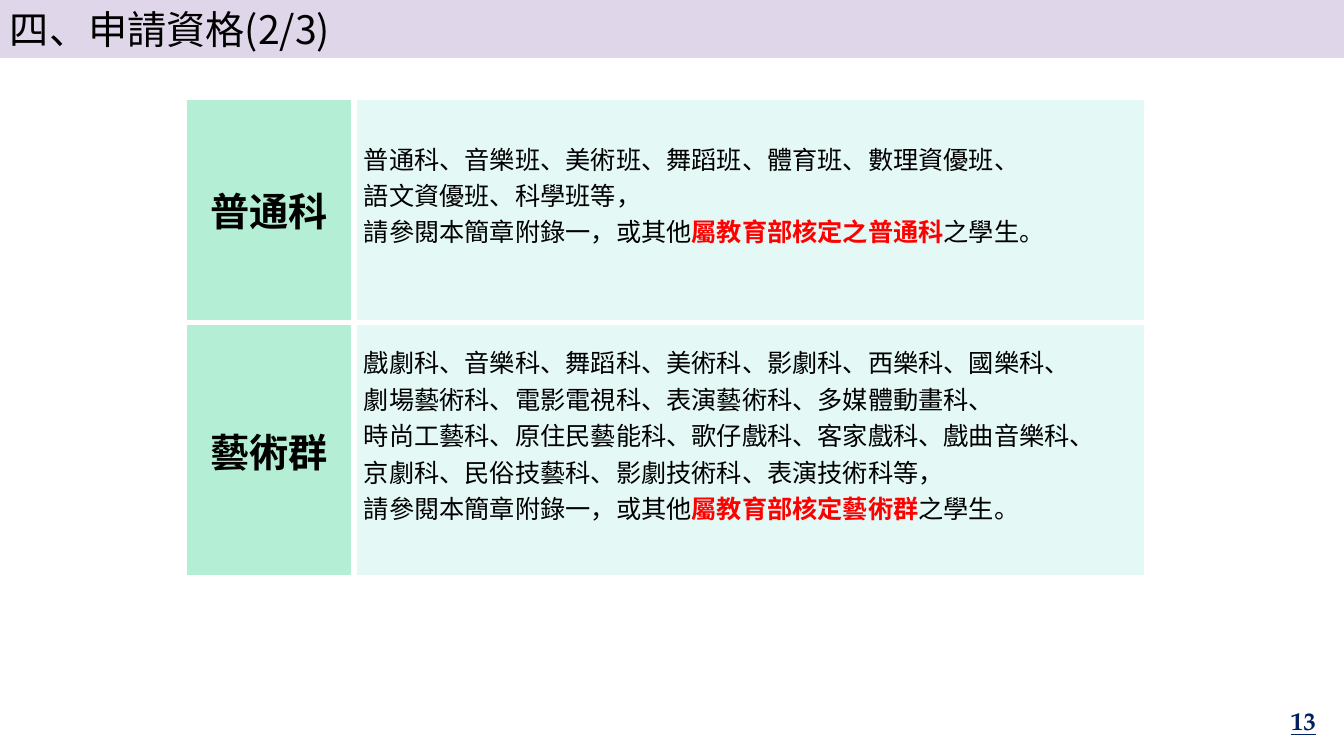
from dataclasses import dataclass

from lxml import etree
from pptx import Presentation
from pptx.dml.color import RGBColor
from pptx.enum import shapes, text
from pptx.oxml import ns
from pptx.util import Inches, Pt


@dataclass(frozen=True)
class Theme:
    sans: str = "Noto Sans CJK JP"
    serif: str = "TeX Gyre Pagella"
    ink: str = "000000"
    accent: str = "FF0000"
    navy: str = "002060"
    band: str = "DFD7E9"
    label_fill: str = "B4EED4"
    detail_fill: str = "E4F8F6"
    border: str = "FFFFFF"
    border_width: float = 4.5
    heading: int = 28
    body: int = 18


THEME = Theme()

GROUPS = [
    ("普通科", 2.24, [
        ["普通科、音樂班、美術班、舞蹈班、體育班、數理資優班、"],
        ["語文資優班、科學班等，"],
        ["請參閱本簡章附錄一，或其他", "屬教育部核定之普通科", "之學生。"],
    ]),
    ("藝術群", 2.53, [
        ["戲劇科、音樂科、舞蹈科、美術科、影劇科、西樂科、國樂科、"],
        ["劇場藝術科、電影電視科、表演藝術科、多媒體動畫科、"],
        ["時尚工藝科、原住民藝能科、歌仔戲科、客家戲科、戲曲音樂科、"],
        ["京劇科、民俗技藝科、影劇技術科、表演技術科等，"],
        ["請參閱本簡章附錄一，或其他", "屬教育部核定藝術群", "之學生。"],
    ]),
]


def style_span(span, size, color=THEME.ink, bold=False, face=THEME.sans):
    span.font.size = Pt(size)
    span.font.bold = bold
    span.font.color.rgb = RGBColor.from_string(color)
    span.font.name = face
    east_asian = etree.SubElement(span.font._element, ns.qn("a:ea"))
    east_asian.set("typeface", face)


def style_cell(cell, fill):
    properties = cell._tc.get_or_add_tcPr()
    for position, side in enumerate(("lnL", "lnR", "lnT", "lnB")):
        line = etree.Element(ns.qn(f"a:{side}"), w=str(Pt(THEME.border_width)))
        solid = etree.SubElement(line, ns.qn("a:solidFill"))
        etree.SubElement(solid, ns.qn("a:srgbClr"), val=THEME.border)
        properties.insert(position, line)
    cell.fill.solid()
    cell.fill.fore_color.rgb = RGBColor.from_string(fill)
    cell.vertical_anchor = text.MSO_ANCHOR.MIDDLE


def add_title_band(page, left, top, width, height, title):
    band = page.shapes.add_shape(
        shapes.MSO_SHAPE.RECTANGLE,
        Inches(left), Inches(top), Inches(width), Inches(height))
    band.shadow.inherit = False
    band.fill.solid()
    band.fill.fore_color.rgb = RGBColor.from_string(THEME.band)
    band.line.color.rgb = RGBColor.from_string(THEME.band)
    band.line.width = Pt(1)
    frame = band.text_frame
    frame.text = title
    frame.vertical_anchor = text.MSO_ANCHOR.MIDDLE
    para = frame.paragraphs[0]
    para.alignment = text.PP_ALIGN.LEFT
    style_span(para.runs[0], THEME.heading)


def fill_label(cell, label):
    style_cell(cell, THEME.label_fill)
    cell.text_frame.text = label
    para = cell.text_frame.paragraphs[0]
    para.alignment = text.PP_ALIGN.CENTER
    style_span(para.runs[0], THEME.heading, bold=True)


def fill_details(cell, lines):
    style_cell(cell, THEME.detail_fill)
    cell.margin_bottom = Inches(0.35)
    frame = cell.text_frame
    frame.text = "\n".join(line[0] for line in lines)
    for para, line in zip(frame.paragraphs, lines):
        para.alignment = text.PP_ALIGN.JUSTIFY
        for words in line[1:]:
            para.add_run().text = words
        for order, span in enumerate(para.runs):
            stressed = order == 1
            color = THEME.accent if stressed else THEME.ink
            style_span(span, THEME.body, color, stressed)


def add_group_table(page, left, top, width, label_width, groups):
    height = sum(row_height for _, row_height, _ in groups)
    table = page.shapes.add_table(
        len(groups), 2,
        Inches(left), Inches(top), Inches(width), Inches(height)).table
    table.columns[0].width = Inches(label_width)
    table.columns[1].width = Inches(width - label_width)
    for index, (label, row_height, lines) in enumerate(groups):
        table.rows[index].height = Inches(row_height)
        fill_label(table.cell(index, 0), label)
        fill_details(table.cell(index, 1), lines)


def add_page_number(page, left, top, width, height, number):
    box = page.shapes.add_textbox(
        Inches(left), Inches(top), Inches(width), Inches(height))
    frame = box.text_frame
    frame.word_wrap = True
    frame.vertical_anchor = text.MSO_ANCHOR.MIDDLE
    frame.text = str(number)
    para = frame.paragraphs[0]
    para.alignment = text.PP_ALIGN.RIGHT
    span = para.runs[0]
    style_span(span, THEME.body, THEME.navy, True, THEME.serif)
    span.font.underline = True


def main():
    deck = Presentation()
    deck.slide_width = Inches(13.33)
    deck.slide_height = Inches(7.5)
    page = deck.slides.add_slide(deck.slide_layouts[6])
    add_title_band(page, 0, 0, 13.33, 0.57, "四、申請資格(2/3)")
    add_group_table(page, 1.83, 0.96, 9.54, 1.68, GROUPS)
    add_page_number(page, 10.15, 6.95, 3, 0.4, 13)
    deck.save("out.pptx")


if __name__ == "__main__":
    main()
